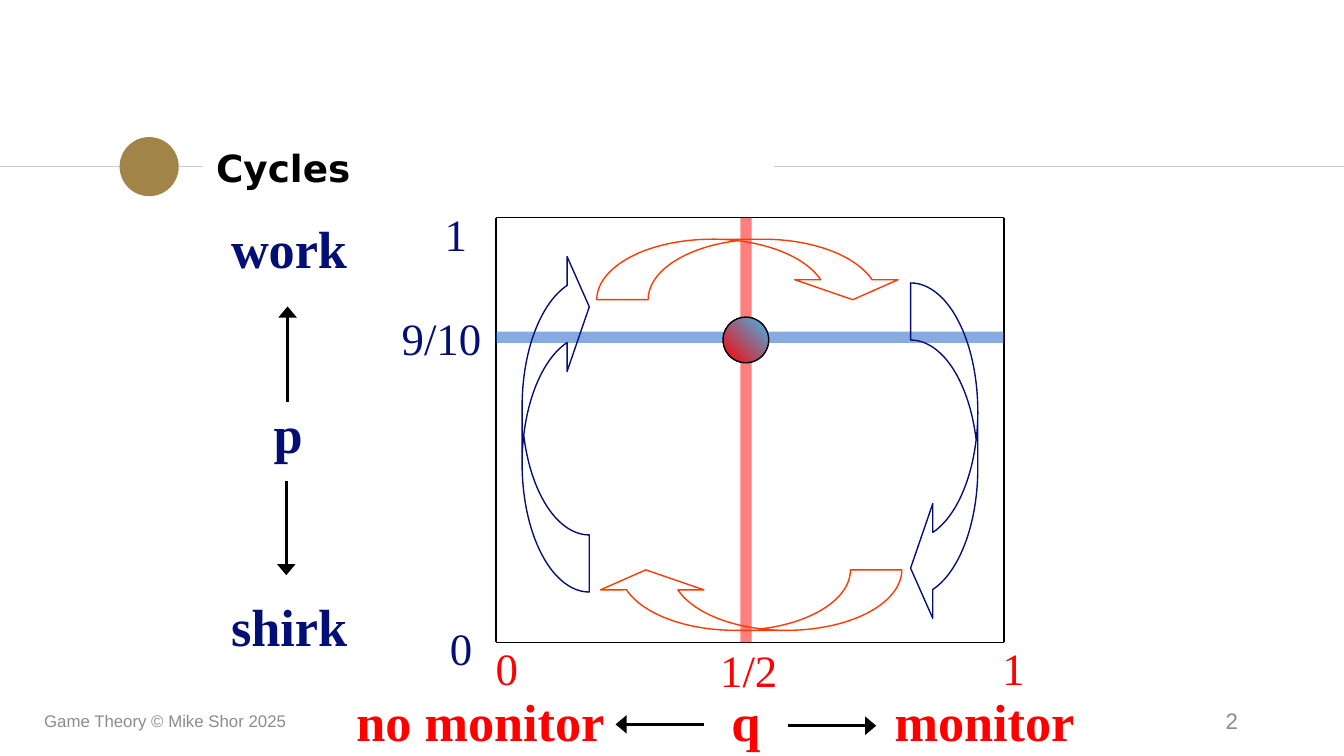
from lxml.etree import SubElement
from pptx import Presentation
from pptx.dml.color import RGBColor
from pptx.enum.shapes import MSO_CONNECTOR, MSO_SHAPE
from pptx.enum.text import MSO_ANCHOR, MSO_AUTO_SIZE, PP_ALIGN
from pptx.oxml.ns import qn
from pptx.util import Inches, Pt

BLACK, GREY, RULE, GOLD = "000000", "8C8C8C", "CCCCCC", "A28448"
RED, NAVY, ORANGE, BLUE, SKY = "FF0000", "040F76", "FF3A01", "0E58C4", "3EBBF0"
SERIF = "Times New Roman"
L, C, R = PP_ALIGN.LEFT, PP_ALIGN.CENTER, PP_ALIGN.RIGHT

LEFT, TOP, RIGHT, BOTTOM = 3.69, 1.62, 7.47, 4.78
Q_HALF, P_NINE_TENTHS = 5.55, 2.51

RULES = [(0, 1.24, 1.51, 1.24), (5.76, 1.24, 10, 1.24)]
FRAME = [
    (LEFT, TOP, LEFT, BOTTOM),
    (LEFT, BOTTOM, RIGHT, BOTTOM),
    (LEFT, TOP, RIGHT, TOP),
    (RIGHT, TOP, RIGHT, BOTTOM),
]
BEST_REPLIES = [
    ((Q_HALF, TOP, Q_HALF, BOTTOM), RED),
    ((LEFT, P_NINE_TENTHS, RIGHT, P_NINE_TENTHS), BLUE),
]
AXIS_ARROWS = [
    (2.14, 2.99, 2.14, 2.28),
    (2.13, 3.58, 2.13, 4.28),
    (5.86, 5.4, 6.52, 5.4),
    (5.24, 5.39, 4.58, 5.39),
]
STRATEGIES = [
    ("q", (5.25, 5.08, 0.6, 0.57), C, RED),
    ("p", (1.91, 2.94, 0.44, 0.5), R, NAVY),
    ("shirk", (1.39, 4.37, 1.29, 0.57), R, NAVY),
    ("work", (1.23, 1.56, 1.45, 0.57), R, NAVY),
    ("no monitor", (2.51, 5.08, 2.13, 0.57), C, RED),
    ("monitor", (6.12, 5.08, 2.41, 0.57), C, RED),
]
TICKS = [
    ("0", (3.59, 4.72, 0.27, 0.5), L, RED),
    ("1", (7.36, 4.72, 0.27, 0.5), L, RED),
    ("1/2", (5.26, 4.73, 0.74, 0.5), L, RED),
    ("0", (3.25, 4.57, 0.27, 0.41), C, NAVY),
    ("9/10", (2.87, 2.26, 0.83, 0.5), C, NAVY),
    ("1", (3.21, 1.49, 0.34, 0.41), C, NAVY),
]
CYCLE = [
    ((4.42, 4.24, 2.29, 0.45), 180, ORANGE),
    ((5.75, 3.13, 2.55, 0.5), 90, NAVY),
    ((4.44, 1.78, 2.29, 0.45), 0, ORANGE),
    ((2.86, 2.88, 2.55, 0.5), 270, NAVY),
]

prs = Presentation()
prs.slide_width = Inches(10)
prs.slide_height = prs.slide_width * 9 // 16
s = prs.slides.add_slide(prs.slide_layouts[6])


def rgb(color):
    return RGBColor.from_string(color)


def add_line(ends, color, width=0.75, arrow=False, alpha=None):
    cx = s.shapes.add_connector(MSO_CONNECTOR.STRAIGHT, *map(Inches, ends))
    cx.line.color.rgb = rgb(color)
    cx.line.width = Pt(width)
    sp_pr = cx._element.spPr
    ln = sp_pr.find(qn("a:ln"))
    if alpha:
        clr = ln.find(".//" + qn("a:srgbClr"))
        SubElement(clr, qn("a:alpha"), val=str(alpha * 1000))
    if arrow:
        SubElement(ln, qn("a:tailEnd"), type="triangle", w="lg", len="med")
    SubElement(sp_pr, qn("a:effectLst"))


def add_shape(kind, box, fill=None, line=None):
    sp = s.shapes.add_shape(kind, *map(Inches, box))
    sp.shadow.inherit = False
    if fill:
        sp.fill.solid()
        sp.fill.fore_color.rgb = rgb(fill)
    else:
        sp.fill.background()
    if line:
        sp.line.color.rgb = rgb(line)
        sp.line.width = Pt(0.75)
    else:
        sp.line.fill.background()
    return sp


def add_text(text, box, align, color, size, font=SERIF, bold=False, middle=False):
    tf = s.shapes.add_textbox(*map(Inches, box)).text_frame
    tf.word_wrap = True
    if middle:
        tf.vertical_anchor = MSO_ANCHOR.MIDDLE
    else:
        tf.auto_size = MSO_AUTO_SIZE.SHAPE_TO_FIT_TEXT
    p = tf.paragraphs[0]
    p.alignment = align
    r = p.add_run()
    r.text = text
    r.font.name, r.font.size, r.font.bold = font, Pt(size), bold
    r.font.color.rgb = rgb(color)


for ends in RULES:
    add_line(ends, RULE)
add_shape(MSO_SHAPE.OVAL, (0.89, 1.02, 0.44, 0.44), GOLD)
add_text("Cycles", (1.51, 1.01, 4.24, 0.48), L, BLACK, 20, "DejaVu Sans", True, True)
add_text("2", (7.06, 5.21, 2.25, 0.3), R, GREY, 12, "Arial", middle=True)
add_text("Game Theory © Mike Shor 2025", (0.23, 5.21, 3.38, 0.3), L, GREY, 9, "Arial", middle=True)

for text, box, align, color in STRATEGIES:
    add_text(text, box, align, color, 28, bold=True)
for ends in AXIS_ARROWS:
    add_line(ends, BLACK, 1.5, arrow=True)
for ends in FRAME:
    add_line(ends, BLACK)
for ends, color in BEST_REPLIES:
    add_line(ends, color, 6, alpha=50)
for text, box, align, color in TICKS:
    add_text(text, box, align, color, 24)

for box, angle, color in CYCLE:
    sp = add_shape(MSO_SHAPE.CURVED_DOWN_ARROW, box, line=color)
    sp.rotation = angle
    for i, value in enumerate((0.85, 1.71, 0.33)):
        sp.adjustments[i] = value

equilibrium = add_shape(MSO_SHAPE.OVAL, (5.38, 2.36, 0.34, 0.34), line=BLACK)
equilibrium.fill.gradient()
equilibrium.fill.gradient_angle = 45
for stop, color in zip(equilibrium.fill.gradient_stops, (RED, SKY)):
    stop.color.rgb = rgb(color)

prs.save("out.pptx")
